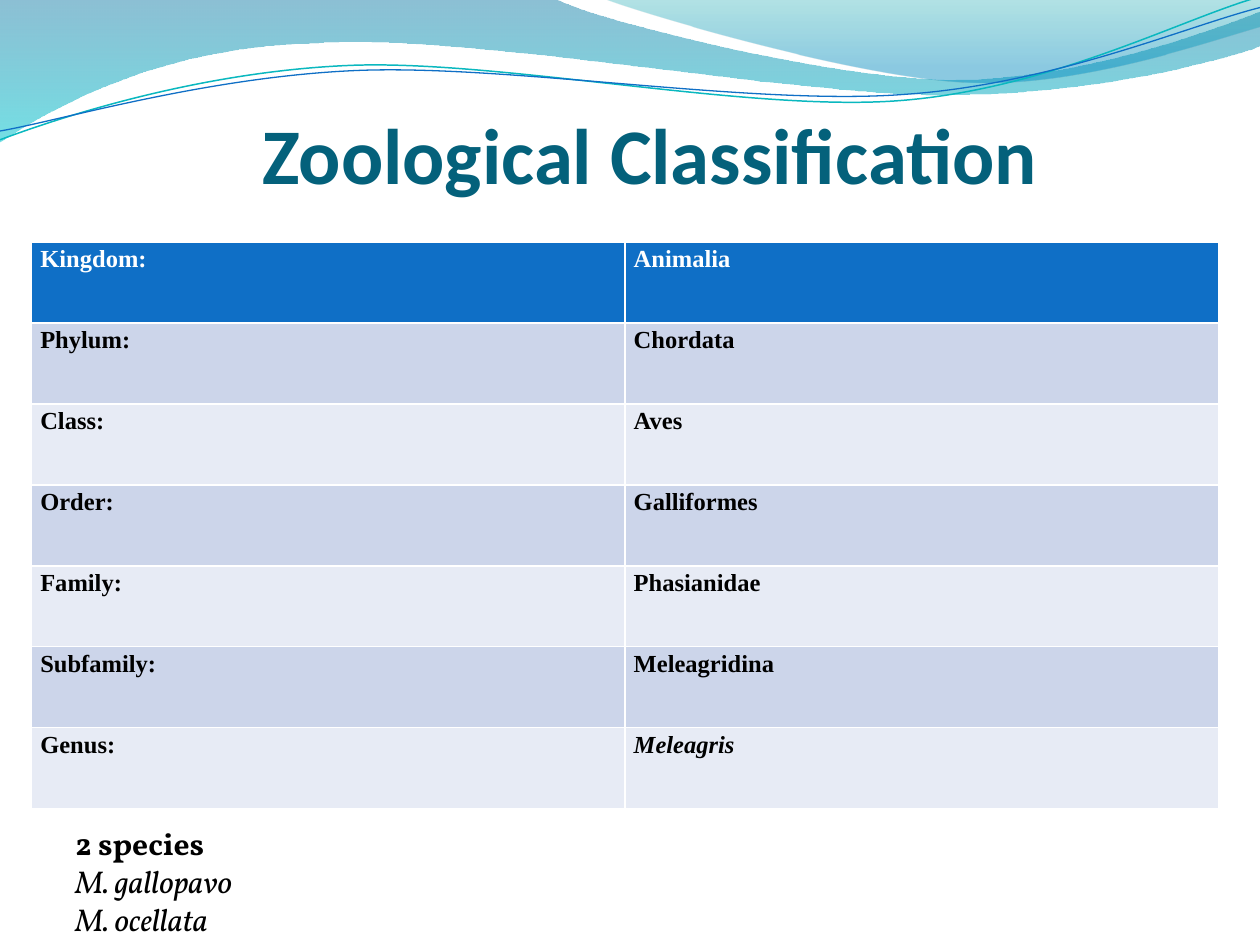
from pptx import Presentation, util as u
from pptx.dml.color import RGBColor
from pptx.enum import text as t
from pptx.oxml.ns import qn
from lxml import etree

WIDE, HIGH = 10, 7.5
UNIT = 1000  # path units per inch
BLUE, WHITE, BLACK = "0F6FC6", "FFFFFF", "000000"
BANDS = ["E7EBF5", "CCD5EA"]
RANKS = [
    ("Kingdom:", "Animalia"),
    ("Phylum:", "Chordata"),
    ("Class:", "Aves"),
    ("Order:", "Galliformes"),
    ("Family:", "Phasianidae"),
    ("Subfamily:", "Meleagridina"),
    ("Genus:", "Meleagris"),
]

# Each wave: start point, then one point for a line or three for a curve
BACK = [[(0, 0)], [(4.4, -0.01)],
        [(4.76, 0.17), (6.64, 0.63), (7.58, 0.63)],
        [(8.53, 0.63), (9.58, 0.26), (10, 0.09)], [(10.01, 0.36)],
        [(9.83, 0.44), (8.7, 0.76), (7.46, 0.75)],
        [(6.22, 0.75), (3.82, 0.28), (2.57, 0.34)],
        [(1.29, 0.36), (0.46, 0.83), (-0.01, 1.13)]]
FRONT = [[(4.79, -0.01)], [(5.09, 0.11), (6.82, 0.62), (7.69, 0.65)],
         [(8.56, 0.69), (9.61, 0.32), (10, 0.21)], [(10, 0)]]
TEAL = [[(0, 1.11)], [(0.48, 0.93), (1.58, 0.57), (2.77, 0.52)],
        [(3.95, 0.47), (5.93, 0.89), (7.13, 0.8)],
        [(8.33, 0.71), (9.38, 0.15), (9.98, -0.02)]]
NAVY = [[(0, 1.04)], [(0.47, 0.96), (1.64, 0.61), (2.83, 0.56)],
        [(4.03, 0.51), (5.97, 0.84), (7.17, 0.75)],
        [(8.36, 0.67), (9.41, 0.21), (10, 0.06)]]


def color(code):
    return RGBColor.from_string(code)


def write(para, words, size, font, code, bold=False, italic=False):
    """Fill a paragraph; a vertical tab in the words is a line break."""
    para.text = words
    para.alignment = t.PP_ALIGN.LEFT
    for run in para.runs:
        run.font.size, run.font.name = u.Pt(size), font
        run.font.bold, run.font.italic = bold, italic
        run.font.color.rgb = color(code)


def draw(slide, wave, close):
    """Join the end points, then bend the lines that have control points."""
    parts = [[(round(x * UNIT), round(y * UNIT)) for x, y in part]
             for part in wave]
    ends = [part[-1] for part in parts]
    pen = slide.shapes.build_freeform(*ends[0], scale=u.Inches(1) / UNIT)
    pen.add_line_segments(ends[1:], close=close)
    shape = pen.convert_to_shape()
    shape.shadow.inherit = False
    left, top = (min(axis) for axis in zip(*ends))
    lines = list(shape.element.iter(qn("a:lnTo")))
    for line, part in zip(lines, parts[1:]):
        if len(part) == 3:
            bend = etree.Element(qn("a:cubicBezTo"))
            for x, y in part:
                etree.SubElement(bend, qn("a:pt"),
                                 x=str(x - left), y=str(y - top))
            line.getparent().replace(line, bend)
    return shape


def band(slide, wave, stops):
    """Closed wave with a see-through gradient from top to bottom."""
    shape = draw(slide, wave, True)
    shape.line.fill.background()
    shape.fill.gradient()
    shape.fill.gradient_angle = 270
    for stop, (place, code, _) in zip(shape.fill.gradient_stops, stops):
        stop.position = place
        stop.color.rgb = color(code)
    tags = shape.element.spPr.iter(qn("a:srgbClr"))
    for tag, (_, _, alpha) in zip(tags, stops):
        etree.SubElement(tag, qn("a:alpha"), val=str(alpha * 1000))


def curve(slide, wave, code, width):
    shape = draw(slide, wave, False)
    shape.fill.background()
    shape.line.color.rgb = color(code)
    shape.line.width = u.Pt(width)


def head(slide):
    title = slide.shapes.title
    slide.shapes._spTree.append(title.element)  # in front of the waves
    title.left, title.top = u.Inches(2.08), u.Inches(0.83)
    title.width, title.height = u.Inches(7.33), u.Inches(0.76)
    frame = title.text_frame
    frame.margin_left = frame.margin_right = 0
    frame.margin_top = frame.margin_bottom = 0
    frame.vertical_anchor = t.MSO_ANCHOR.BOTTOM
    frame.auto_size = t.MSO_AUTO_SIZE.NONE
    write(frame.paragraphs[0], "Zoological Classification", 45, "Calibri",
          "04617B", bold=True)


def table(slide):
    """The default table style gives the white borders."""
    grid = slide.shapes.add_table(
        len(RANKS), 2, u.Inches(0.25), u.Inches(1.92),
        u.Inches(9.42), u.Inches(4.5)).table
    for row, names in enumerate(RANKS):
        for col, name in enumerate(names):
            cell = grid.cell(row, col)
            cell.margin_left = cell.margin_right = u.Inches(0.07)
            cell.margin_top = cell.margin_bottom = 0
            cell.fill.solid()
            cell.fill.fore_color.rgb = color(BANDS[row % 2] if row else BLUE)
            para = cell.text_frame.paragraphs[0]
            para.line_spacing = 1.15
            write(para, name, 14, "Times New Roman", BLACK if row else WHITE,
                  bold=True, italic=name == "Meleagris")


def species(slide):
    box = slide.shapes.add_textbox(u.Inches(0.5), u.Inches(6.49),
                                   u.Inches(5.25), u.Inches(1.01))
    frame = box.text_frame
    frame.word_wrap = True
    write(frame.paragraphs[0], "2 species", 18, "Vollkorn", BLACK, bold=True)
    write(frame.add_paragraph(), "M. gallopavo\vM. ocellata", 18, "Vollkorn",
          BLACK, italic=True)


def main():
    deck = Presentation()
    deck.slide_width, deck.slide_height = u.Inches(WIDE), u.Inches(HIGH)
    slide = deck.slides.add_slide(deck.slide_layouts[5])
    # Waves along the top
    band(slide, BACK, [(0, "0074A1", 45), (1, "00C6CF", 55)])
    band(slide, FRONT, [(0, "00A1A9", 30), (0.8, "008BBF", 45)])
    curve(slide, TEAL, "0AB8BF", 0.85)
    curve(slide, NAVY, BLUE, 0.75)
    # Content
    head(slide)
    table(slide)
    species(slide)
    deck.save("out.pptx")


if __name__ == "__main__":
    main()
